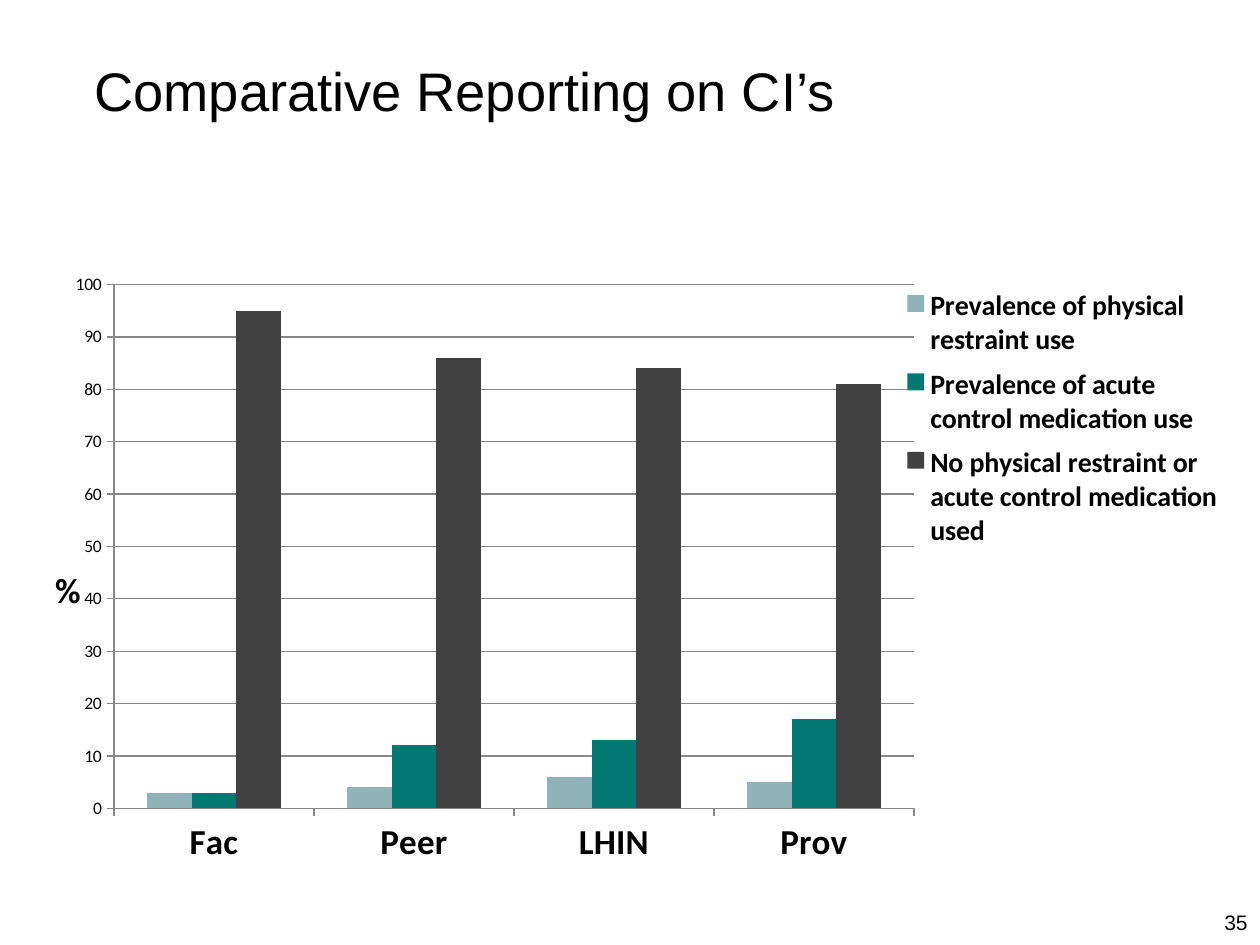
"""Build a slide with a clustered column chart comparing control interventions."""
from lxml import etree
from pptx import Presentation
from pptx import util as u
from pptx.chart.data import CategoryChartData
from pptx.dml.color import RGBColor
from pptx.enum import chart as charts, text
from pptx.oxml.ns import qn

COLORS = {"text": "000000", "line": "878787", "physical": "8FB3B9",
          "medication": "037872", "neither": "414141"}
SERIES = [
    ("Prevalence of physical restraint use", (3, 4, 6, 5), "physical"),
    ("Prevalence of acute control medication use ", (3, 12, 13, 17), "medication"),
    ("No physical restraint or acute control medication used", (95, 86, 84, 81), "neither"),
]


def style_font(font, name, size, bold=False):
    font.name, font.size, font.bold = name, u.Pt(size), bold
    font.color.rgb = RGBColor.from_string(COLORS["text"])


def place(element, index, **settings):
    for old in element.findall(qn("c:layout")):
        element.remove(old)
    layout = etree.Element(qn("c:layout"))
    manual = etree.SubElement(layout, qn("c:manualLayout"))
    for tag, value in settings.items():
        etree.SubElement(manual, qn(f"c:{tag}")).set("val", str(value))
    element.insert(index, layout)


presentation = Presentation()
presentation.slide_width, presentation.slide_height = u.Pt(720), u.Pt(540)
slide = presentation.slides.add_slide(presentation.slide_layouts[5])

title = slide.shapes.title
title.left, title.top, title.width, title.height = u.Pt(46.8), u.Pt(23.8), u.Pt(601.2), u.Pt(90)
frame = title.text_frame
frame.text = "Comparative Reporting on CI’s"
frame.vertical_anchor = text.MSO_ANCHOR.MIDDLE
frame.margin_bottom = u.Pt(39)
frame.paragraphs[0].alignment = text.PP_ALIGN.LEFT
style_font(frame.paragraphs[0].runs[0].font, "Arial", 31)

number = slide.shapes.add_textbox(u.Pt(642.2), u.Pt(516.2), u.Pt(77.8), u.Pt(23.8))
number.text_frame.word_wrap = True
number.text_frame.text = "35"
paragraph = number.text_frame.paragraphs[0]
paragraph.alignment = text.PP_ALIGN.RIGHT
style_font(paragraph.runs[0].font, "Arial", 12)

data = CategoryChartData()
data.categories = ["Fac", "Peer", "LHIN", "Prov"]
for name, values, _ in SERIES:
    data.add_series(name, values)
chart = slide.shapes.add_chart(
    charts.XL_CHART_TYPE.COLUMN_CLUSTERED,
    u.Pt(23.8), u.Pt(84.2), u.Pt(678.2), u.Pt(419.8), data).chart
chart.has_title = False
style_font(chart.font, "Calibri", 10)
plot = chart.plots[0]
plot.gap_width, plot.overlap, plot.vary_by_categories = 150, 0, False
for series, (_, _, color) in zip(plot.series, SERIES):
    series.format.fill.solid()
    series.format.fill.fore_color.rgb = RGBColor.from_string(COLORS[color])

category_axis, value_axis = chart.category_axis, chart.value_axis
value_axis.minimum_scale, value_axis.maximum_scale, value_axis.major_unit = 0, 100, 10
value_axis.has_major_gridlines = True
style_font(category_axis.tick_labels.font, "Calibri", 20, True)
style_font(value_axis.tick_labels.font, "Calibri", 10)
for axis in (category_axis, value_axis):
    axis.major_tick_mark = charts.XL_TICK_MARK.OUTSIDE
for item in (category_axis, value_axis, value_axis.major_gridlines):
    item.format.line.width = u.Pt(0.75)
    item.format.line.color.rgb = RGBColor.from_string(COLORS["line"])

axis_title = value_axis.axis_title
axis_title.text_frame.text = "%"
style_font(axis_title.text_frame.paragraphs[0].runs[0].font, "Calibri", 20, True)
axis_title._element.find(".//" + qn("a:bodyPr")).set("rot", "0")

chart.has_legend = True
legend = chart.legend
legend.position = charts.XL_LEGEND_POSITION.RIGHT
legend.include_in_layout = False
style_font(legend.font, "Calibri", 16, True)

place(plot._element.getparent(), 0, layoutTarget="inner", xMode="edge", yMode="edge",
      x=0.061, y=0.187, w=0.674, h=0.713)
place(axis_title._element, 1, xMode="edge", yMode="edge", x=0.006, y=0.56)
place(legend._element, 1, xMode="edge", yMode="edge", x=0.72, y=0.18, w=0.28, h=0.38)

presentation.save("out.pptx")
